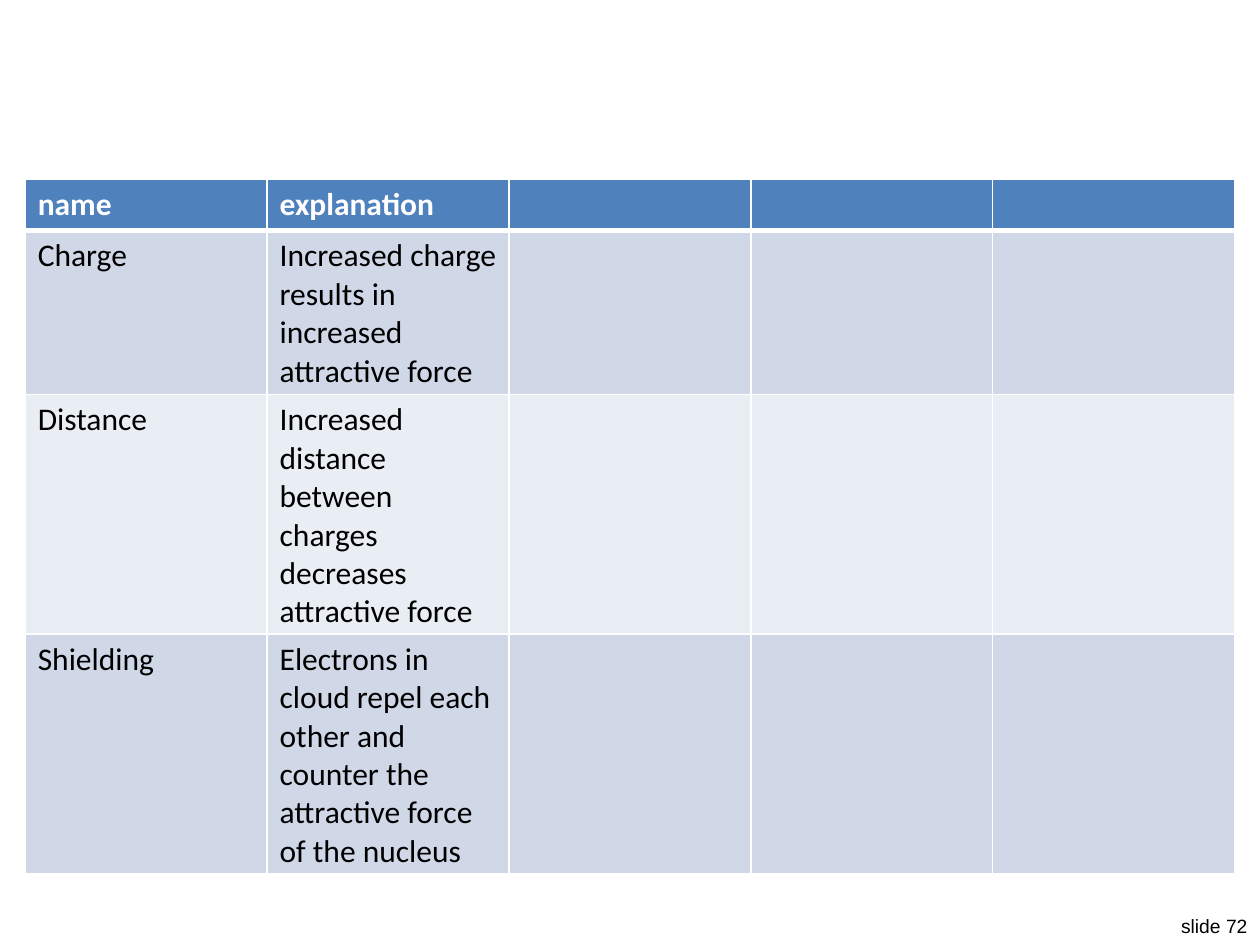
from lxml.etree import SubElement
from pptx import Presentation
from pptx.dml.color import RGBColor
from pptx.enum.text import MSO_AUTO_SIZE, PP_ALIGN
from pptx.oxml.ns import qn
from pptx.util import Inches, Pt

COLORS = {
    "header": "4F81BD",
    "odd_row": "D0D8E8",
    "even_row": "E9EDF4",
    "white": "FFFFFF",
    "black": "000000",
}
COLUMN_COUNT = 5
COLUMN_WIDTH = 1.92
ROW_HEIGHTS = [0.41, 1.29, 1.9, 1.9]
ROWS = [
    ("name", "explanation"),
    ("Charge", "Increased charge results in increased attractive force"),
    ("Distance", "Increased distance between charges decreases attractive force"),
    ("Shielding", "Electrons in cloud repel each other and counter "
                  "the attractive force of the nucleus"),
]


def write_text(frame, text, font="Calibri", size=18, color="black",
               bold=False, align=PP_ALIGN.LEFT):
    para = frame.paragraphs[0]
    para.alignment = align
    span = para.add_run()
    span.text = text
    span.font.name = font
    span.font.size = Pt(size)
    span.font.bold = bold
    span.font.color.rgb = RGBColor.from_string(COLORS[color])


def add_borders(cell, widths):
    """Draw white borders; must run before the cell's fill is set."""
    properties = cell._tc.get_or_add_tcPr()
    for side, width in widths.items():
        line = SubElement(properties, qn(f"a:ln{side}"), w=str(Pt(width)))
        fill = SubElement(line, qn("a:solidFill"))
        SubElement(fill, qn("a:srgbClr"), val=COLORS["white"])


def format_cell(cell, row_index):
    is_header = row_index == 0
    add_borders(cell, {
        "L": 1,
        "R": 1,
        "T": 3 if row_index == 1 else 1,
        "B": 3 if is_header else 1,
    })
    if is_header:
        fill_color = "header"
    else:
        fill_color = "odd_row" if row_index % 2 else "even_row"
    cell.fill.solid()
    cell.fill.fore_color.rgb = RGBColor.from_string(COLORS[fill_color])


def add_force_table(page):
    table = page.shapes.add_table(
        len(ROWS), COLUMN_COUNT, Inches(0.2), Inches(1.42),
        Inches(COLUMN_COUNT * COLUMN_WIDTH), Inches(sum(ROW_HEIGHTS))).table
    for column in table.columns:
        column.width = Inches(COLUMN_WIDTH)
    for row_index, (texts, height) in enumerate(zip(ROWS, ROW_HEIGHTS)):
        row = table.rows[row_index]
        row.height = Inches(height)
        for cell in row.cells:
            format_cell(cell, row_index)
        is_header = row_index == 0
        for cell, text in zip(row.cells, texts):
            write_text(cell.text_frame, text, bold=is_header,
                       color="white" if is_header else "black")


def add_slide_label(page):
    box = page.shapes.add_textbox(Inches(9.25), Inches(7.21),
                                  Inches(0.75), Inches(0.29))
    frame = box.text_frame
    frame.word_wrap = False
    frame.auto_size = MSO_AUTO_SIZE.SHAPE_TO_FIT_TEXT
    write_text(frame, "slide 72", font="Arial", size=11, align=PP_ALIGN.RIGHT)


def main():
    deck = Presentation()
    deck.slide_width = Inches(10)
    deck.slide_height = Inches(7.5)
    blank_layout = deck.slide_layouts[6]
    page = deck.slides.add_slide(blank_layout)
    add_slide_label(page)
    add_force_table(page)
    deck.save("out.pptx")


if __name__ == "__main__":
    main()
